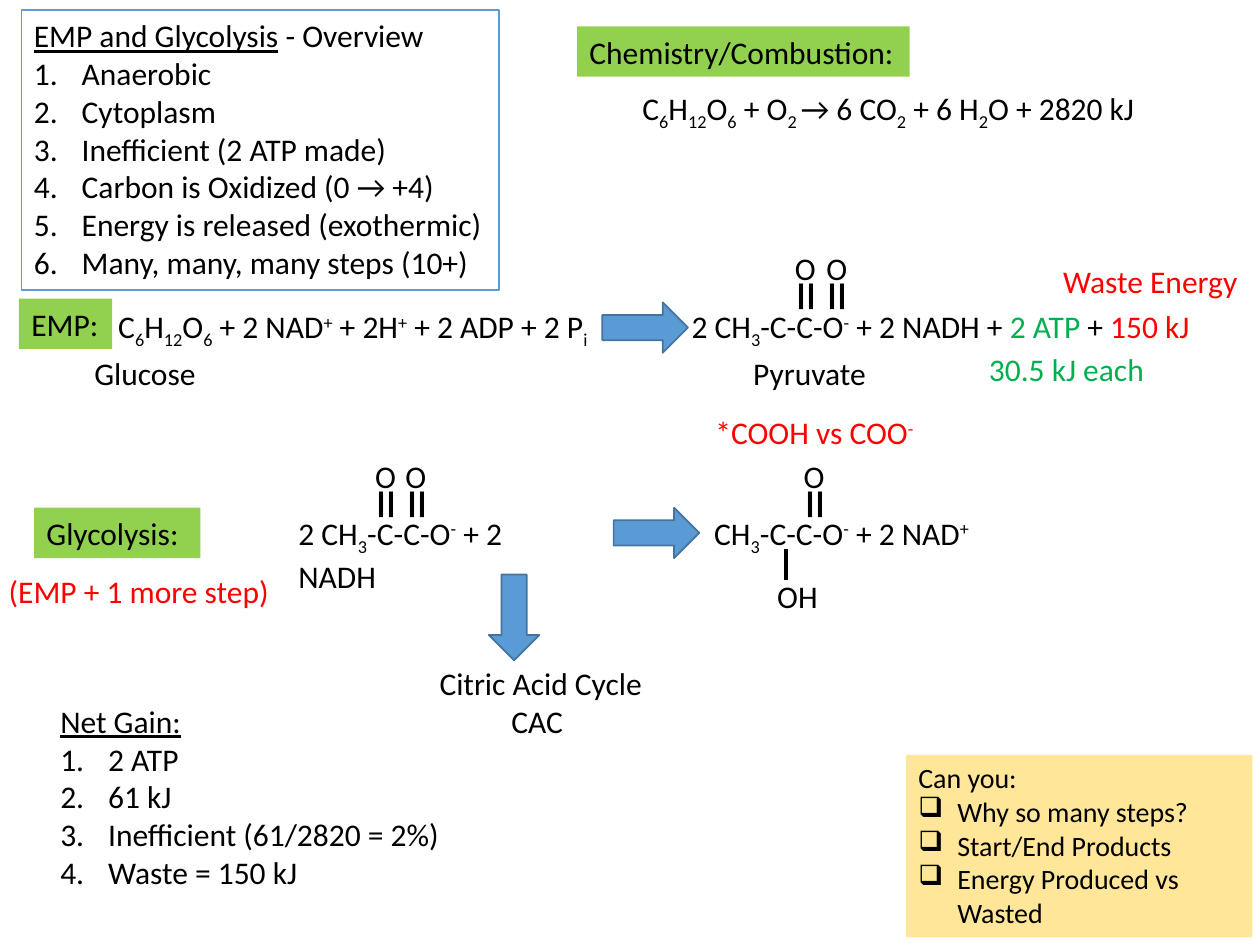
from lxml.etree import SubElement
from pptx import Presentation
from pptx.dml.color import RGBColor
from pptx.enum.shapes import MSO_CONNECTOR as Link, MSO_SHAPE as Preset
from pptx.enum.text import MSO_AUTO_SIZE as Fit, PP_ALIGN as Align
from pptx.oxml.ns import qn
from pptx.util import Inches, Pt

BLACK = RGBColor(0x00, 0x00, 0x00)
WHITE = RGBColor(0xFF, 0xFF, 0xFF)
RED = RGBColor(0xFF, 0x00, 0x00)
GREEN = RGBColor(0x00, 0xB0, 0x50)
LIME = RGBColor(0x92, 0xD0, 0x50)
SAND = RGBColor(0xFF, 0xE6, 0x99)
BLUE = RGBColor(0x5B, 0x9B, 0xD5)
NAVY = RGBColor(0x43, 0x73, 0x9E)

COLUMNS, ROWS = 100, 75
LABEL_HEIGHT = 4
NUMBERED = ("a:buAutoNum", {"type": "arabicPeriod"}, 0.38)
CHECKED = ("a:buChar", {"char": "❑"}, 0.31)

# First letter of a piece between bars -> run baseline or font format
BASELINES = {"_": "-25000", "^": "30000"}
FORMATS = {"~": {"underline": True}, "$": {"color": GREEN}, "!": {"color": RED}}


class Board:
    """Style and current slide; lengths are columns and rows of the grid."""

    def __init__(self, deck):
        self.slide = deck.slides.add_slide(deck.slide_layouts[6])
        self.column = deck.slide_width / COLUMNS
        self.row = deck.slide_height / ROWS
        self.style = {"name": "Calibri", "size": Pt(18), "color": BLACK}

    def place(self, left, top, width, height):
        return (round(left * self.column), round(top * self.row),
                round(width * self.column), round(height * self.row))

    def add_runs(self, paragraph, markup, style):
        """Add one run for each piece of the bar-separated markup."""
        for piece in markup.split("|"):
            mark = piece[0]
            marked = mark in BASELINES or mark in FORMATS
            run = paragraph.add_run()
            run.text = piece[1:] if marked else piece
            for key, value in {**style, **FORMATS.get(mark, {})}.items():
                if key == "color":
                    run.font.color.rgb = value
                else:
                    setattr(run.font, key, value)
            if mark in BASELINES:
                run._r.get_or_add_rPr().set("baseline", BASELINES[mark])

    def bullet(self, paragraph, kind):
        tag, attributes, indent = kind
        properties = paragraph._p.get_or_add_pPr()
        properties.set("marL", str(Inches(indent)))
        properties.set("indent", str(-Inches(indent)))
        SubElement(properties, qn(tag), attributes)

    def text(self, left, top, width, *lines, height=LABEL_HEIGHT, fill=None,
             outline=None, bullets=None, wrap=False, turn=0, **style):
        """Put lines in a box; with bullets, the first line is a heading."""
        box = self.slide.shapes.add_textbox(*self.place(left, top, width, height))
        box.rotation = turn
        if fill is not None:
            box.fill.solid()
            box.fill.fore_color.rgb = fill
        if outline is not None:
            box.line.color.rgb = outline
            box.line.width = Pt(1)
        frame = box.text_frame
        frame.word_wrap = wrap
        frame.auto_size = Fit.SHAPE_TO_FIT_TEXT
        for number, line in enumerate(lines):
            paragraph = frame.add_paragraph() if number else frame.paragraphs[0]
            if bullets and number:
                self.bullet(paragraph, bullets)
            self.add_runs(paragraph, line, {**self.style, **style})
        return frame

    def tag(self, left, top, width, label):
        self.text(left, top, width, label, fill=LIME)

    def arrow(self, left, top, turn=0):
        arrow = self.slide.shapes.add_shape(
            Preset.RIGHT_ARROW, *self.place(left, top, 6.8, 4))
        arrow.shadow.inherit = False
        arrow.rotation = turn
        arrow.fill.solid()
        arrow.fill.fore_color.rgb = BLUE
        arrow.line.color.rgb = NAVY
        arrow.line.width = Pt(1)

    def double_bond_oxygen(self, left, top):
        self.text(left, top, 3.7, "O")
        self.text(left - 1.15, top + 0.2, 5.4, "=", height=7.1, wrap=True,
                  turn=270, size=Pt(36))

    def single_bond(self, column, top, bottom):
        x, y, _, length = self.place(column, top, 0, bottom - top)
        bond = self.slide.shapes.add_connector(Link.STRAIGHT, x, y, x, y + length)
        bond.line.color.rgb = BLACK
        bond.line.width = Pt(2.25)
        SubElement(bond._element.spPr, qn("a:effectLst"))


def main():
    deck = Presentation()
    deck.slide_width, deck.slide_height = Inches(10), Inches(7.5)
    board = Board(deck)

    board.text(50, 6.6, 42.4,
               "C|_6|H|_12|O|_6| + O|_2 |→ 6 CO|_2| + 6 H|_2|O + 2820 kJ")
    board.text(1.7, 0.8, 37.9, "~EMP and Glycolysis| - Overview", "Anaerobic",
               "Cytoplasm", "Inefficient (2 ATP made)",
               "Carbon is Oxidized (0 → +4)", "Energy is released (exothermic)",
               "Many, many, many steps (10+)",
               height=22.2, fill=WHITE, outline=BLUE, bullets=NUMBERED)
    board.text(71.9, 59.9, 27.5, "Can you:", "Why so many steps?",
               "Start/End Products", "Energy Produced vs Wasted",
               height=14.5, fill=SAND, bullets=CHECKED, wrap=True, size=Pt(16))

    # EMP reaction
    board.text(8.4, 23.9, 39.3,
               "C|_6|H|_12|O|_6| + 2 NAD|^+| + 2H|^+| + 2 ADP + 2 P|_i")
    board.arrow(47.8, 24)
    board.text(53.9, 23.9, 41.6,
               "2 CH|_3|-C-C-O|^-| + 2 NADH + |$2 ATP |+ |!150 kJ")
    board.text(6.5, 27.6, 10.2, "Glucose")
    board.text(58.8, 27.6, 11, "Pyruvate")
    board.text(83.4, 20.3, 16, "Waste Energy", color=RED)
    board.text(77.5, 27.3, 14.5, "30.5 kJ each", color=GREEN)

    # Glycolysis reaction
    board.text(22.7, 40.3, 24.8, "2 CH|_3|-C-C-O|^-| + 2 NADH")
    board.arrow(48.7, 40.3)
    board.text(55.7, 40.3, 22.2, "CH|_3|-C-C-O|^-| + 2 NAD|^+")
    board.text(55.8, 32.3, 18, "*COOH vs COO|^-", color=RED)
    board.text(-0.3, 44.9, 22.9, "(EMP + 1 more step)", color=RED)

    for left, top in ((62.8, 35.8), (62.1, 19.3), (64.6, 19.3),
                      (31.2, 35.8), (28.8, 35.8)):
        board.double_bond_oxygen(left, top)
    board.text(60.7, 45.3, 5.3, "OH")
    board.single_bond(62.4, 43.6, 46)

    board.arrow(37.4, 47, turn=90)
    cycle = board.text(33.9, 52.2, 18.3, "Citric Acid Cycle", "CAC ", height=7.1)
    cycle.paragraphs[1].alignment = Align.CENTER
    board.text(3.8, 55.2, 32.5, "~Net Gain:", "2 ATP", "61 kJ",
               "Inefficient (61/2820 = 2%)", "Waste = 150 kJ",
               height=19.2, bullets=NUMBERED)

    for left, top, width, label in ((2.7, 40.3, 13.2, "Glycolysis:"),
                                    (45.8, 2.1, 26.4, "Chemistry/Combustion:"),
                                    (1.5, 23.7, 7.4, "EMP:")):
        board.tag(left, top, width, label)

    deck.save("out.pptx")


if __name__ == "__main__":
    main()
